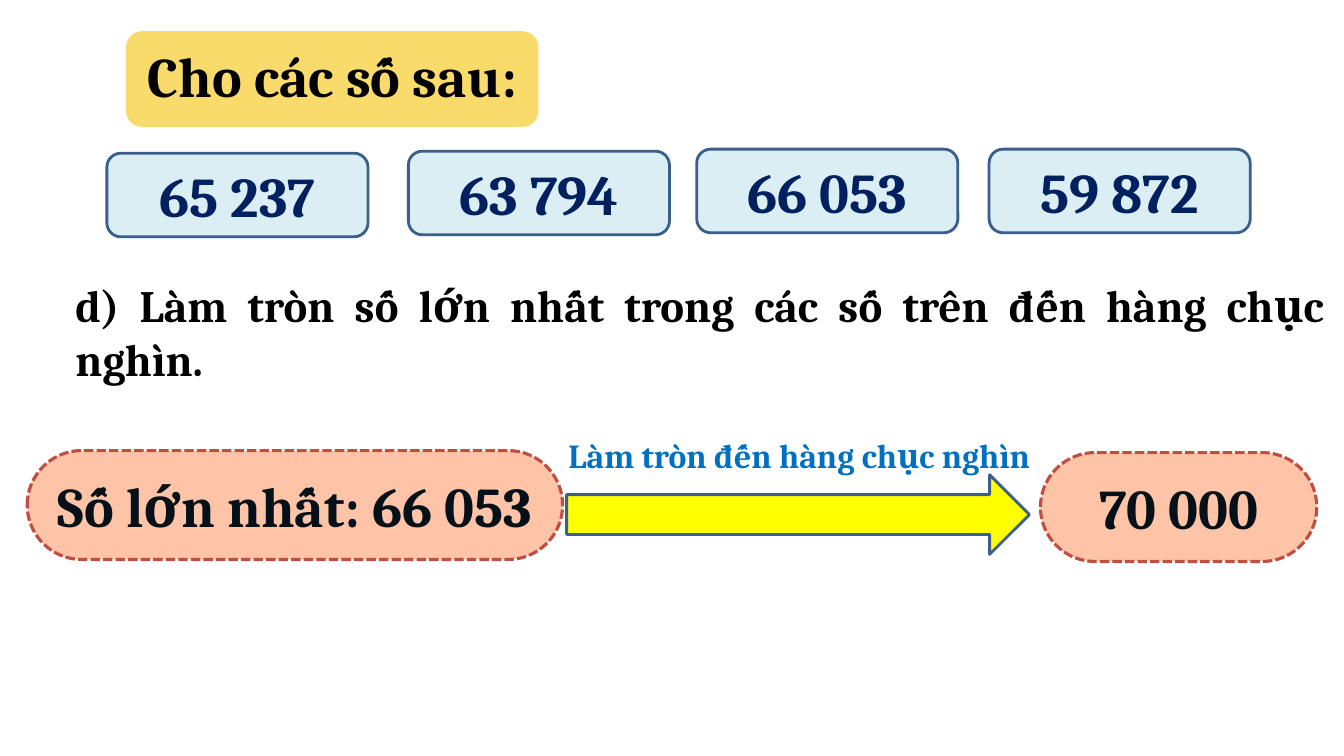
from pptx import Presentation
from pptx.dml.color import RGBColor
from pptx.enum.dml import MSO_LINE
from pptx.enum.shapes import MSO_SHAPE as SHAPE
from pptx.enum.text import MSO_ANCHOR as ANCHOR, PP_ALIGN as ALIGN
from pptx.util import Pt

PX = 9144  # 100 px to the inch
COLORS = {
    "title_fill": "F9DB6C", "black": "000000",
    "card_fill": "DBEEF4", "card_line": "3A5F8C", "card_text": "002060",
    "pill_fill": "FDC4A7", "pill_line": "C04E42", "pill_text": "061018",
    "arrow_fill": "FFFF00", "label": "0070C0",
}


def color(name):
    return RGBColor.from_string(COLORS[name])


def add_box(text, left, top, width, height, kind=None, fill=None, line=None,
            line_width=2, dash=None, corner=None, size=40, ink="black",
            align=ALIGN.CENTER, anchor=ANCHOR.MIDDLE, side=10, bottom=5):
    place = [length * PX for length in (left, top, width, height)]
    if kind is None:
        box = page.shapes.add_textbox(*place)
    else:
        box = page.shapes.add_shape(kind, *place)
        box.shadow.inherit = False
        box.fill.solid()
        box.fill.fore_color.rgb = color(fill)
        if line:
            box.line.color.rgb = color(line)
            box.line.width = Pt(line_width)
            box.line.dash_style = dash
        else:
            box.line.fill.background()
        if corner is not None:
            box.adjustments[0] = corner
    if text:
        frame = box.text_frame
        frame.word_wrap = True
        frame.vertical_anchor = anchor
        frame.margin_left = frame.margin_right = side * PX
        frame.margin_top, frame.margin_bottom = 5 * PX, bottom * PX
        para = frame.paragraphs[0]
        para.alignment = align
        span = para.add_run()
        span.text = text
        span.font.name = "Cambria"
        span.font.size = Pt(size)
        span.font.bold = True
        span.font.color.rgb = color(ink)


deck = Presentation()
deck.slide_width, deck.slide_height = 1333 * PX, 750 * PX
page = deck.slides.add_slide(deck.slide_layouts[6])

# Title
add_box("Cho các số sau:", 125, 31, 409, 95, kind=SHAPE.ROUNDED_RECTANGLE,
        fill="title_fill", side=4, bottom=12)

# Number cards
for number, left, top in [("65 237", 106, 152), ("63 794", 405, 150),
                          ("66 053", 691, 148), ("59 872", 981, 148)]:
    add_box(number, left, top, 259, 83, kind=SHAPE.ROUNDED_RECTANGLE,
            fill="card_fill", line="card_line", ink="card_text")

# Question
add_box("d) Làm tròn số lớn nhất trong các số trên đến hàng chục nghìn.",
        65, 271, 1258, 118, size=32, align=ALIGN.JUSTIFY, anchor=ANCHOR.TOP)

# Largest number and its rounded value
for text, left, top, width in [("Số lớn nhất: 66 053", 27, 447, 531),
                               ("70 000", 1032, 449, 274)]:
    add_box(text, left, top, width, 108, kind=SHAPE.ROUNDED_RECTANGLE,
            fill="pill_fill", line="pill_line", line_width=2.25,
            dash=MSO_LINE.SQUARE_DOT, corner=0.5, ink="pill_text", side=0)

# Rounding arrow with its label
add_box("", 562, 471, 459, 79, kind=SHAPE.RIGHT_ARROW,
        fill="arrow_fill", line="card_line")
add_box("Làm tròn đến hàng chục nghìn", 554, 427, 484, 50, size=24,
        ink="label", align=ALIGN.LEFT, anchor=ANCHOR.TOP)

deck.save("out.pptx")
